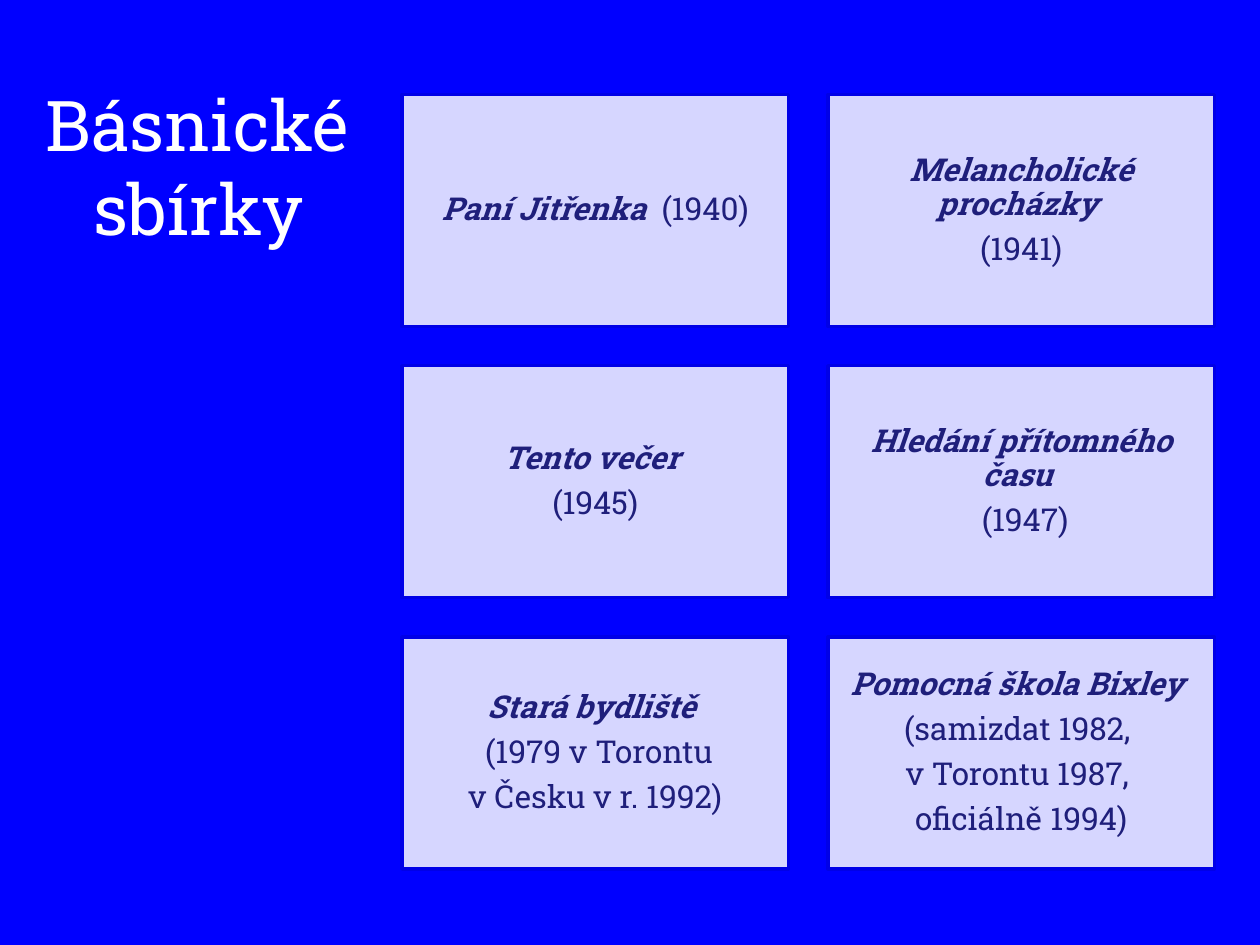
"""Build the slide of poetry collections as a grid of six cards."""
from lxml.etree import SubElement
from pptx import Presentation
from pptx.dml.color import RGBColor
from pptx.enum.shapes import MSO_SHAPE as Shape
from pptx.enum.text import MSO_ANCHOR as Anchor, PP_ALIGN as Align
from pptx.oxml.ns import qn
from pptx.util import Pt


def paint(target, color):
    target.rgb = RGBColor.from_string(color)


def add_span(para, text, color, **formats):
    span = para.add_run()
    span.text = text
    for name, value in {"name": "Roboto Slab", **formats}.items():
        setattr(span.font, name, value)
    paint(span.font.color, color)


COLLECTIONS = [
    [("Paní Jitřenka  ", "(1940)")],
    [("Melancholické procházky ", ""), ("", "(1941)")],
    [("Tento večer ", ""), ("", "(1945)")],
    [("Hledání přítomného času ", ""), ("", " (1947)")],
    [("Stará bydliště ", ""), ("", " (1979 v Torontu"), ("", "v Česku v r. 1992)")],
    [("Pomocná škola Bixley ", ""), ("", "(samizdat 1982, "),
     ("", "v Torontu 1987, "), ("", "oficiálně 1994)")],
]
LEFT, TOP = 229.7, 54
WIDTH, HEIGHT = 221, 132.6
GAP_X, GAP_Y = 22.4, 22.4
CARD_FRAME = {
    "word_wrap": True, "vertical_anchor": Anchor.MIDDLE,
    "margin_left": Pt(5), "margin_right": Pt(5),
    "margin_top": Pt(5), "margin_bottom": Pt(5),
}
CARD_PARA = {"alignment": Align.CENTER, "line_spacing": 0.9, "space_after": Pt(6.3)}

deck = Presentation()
deck.slide_width, deck.slide_height = Pt(720), Pt(540)
page = deck.slides.add_slide(deck.slide_layouts[6])
page.background.fill.solid()
paint(page.background.fill.fore_color, "0000FF")

for index, lines in enumerate(COLLECTIONS):
    row, column = divmod(index, 2)
    card = page.shapes.add_shape(
        Shape.RECTANGLE,
        Pt(LEFT + column * (WIDTH + GAP_X)), Pt(TOP + row * (HEIGHT + GAP_Y)),
        Pt(WIDTH), Pt(HEIGHT))
    card.shadow.inherit = False
    card.fill.solid()
    paint(card.fill.fore_color, "FFFFFF")
    white = next(card.fill._xPr.iter(qn("a:srgbClr")))
    SubElement(white, qn("a:alpha"), val="84000")
    paint(card.line.color, "0000E7")
    card.line.width = Pt(2)

    frame = card.text_frame
    for name, value in CARD_FRAME.items():
        setattr(frame, name, value)
    for number, (title, note) in enumerate(lines):
        para = frame.add_paragraph() if number else frame.paragraphs[0]
        for name, value in CARD_PARA.items():
            setattr(para, name, value)
        if title:
            add_span(para, title, "1F1F7B", size=Pt(18), bold=True, italic=True)
        if note:
            add_span(para, note, "1F1F7B", size=Pt(18))

heading = page.shapes.add_textbox(Pt(13.7), Pt(49), Pt(199), Pt(91))
heading.text_frame.word_wrap = True
heading.text_frame.vertical_anchor = Anchor.MIDDLE
para = heading.text_frame.paragraphs[0]
para.alignment = Align.CENTER
add_span(para, "Básnické sbírky", "FFFFFF", size=Pt(40))

deck.save("out.pptx")
